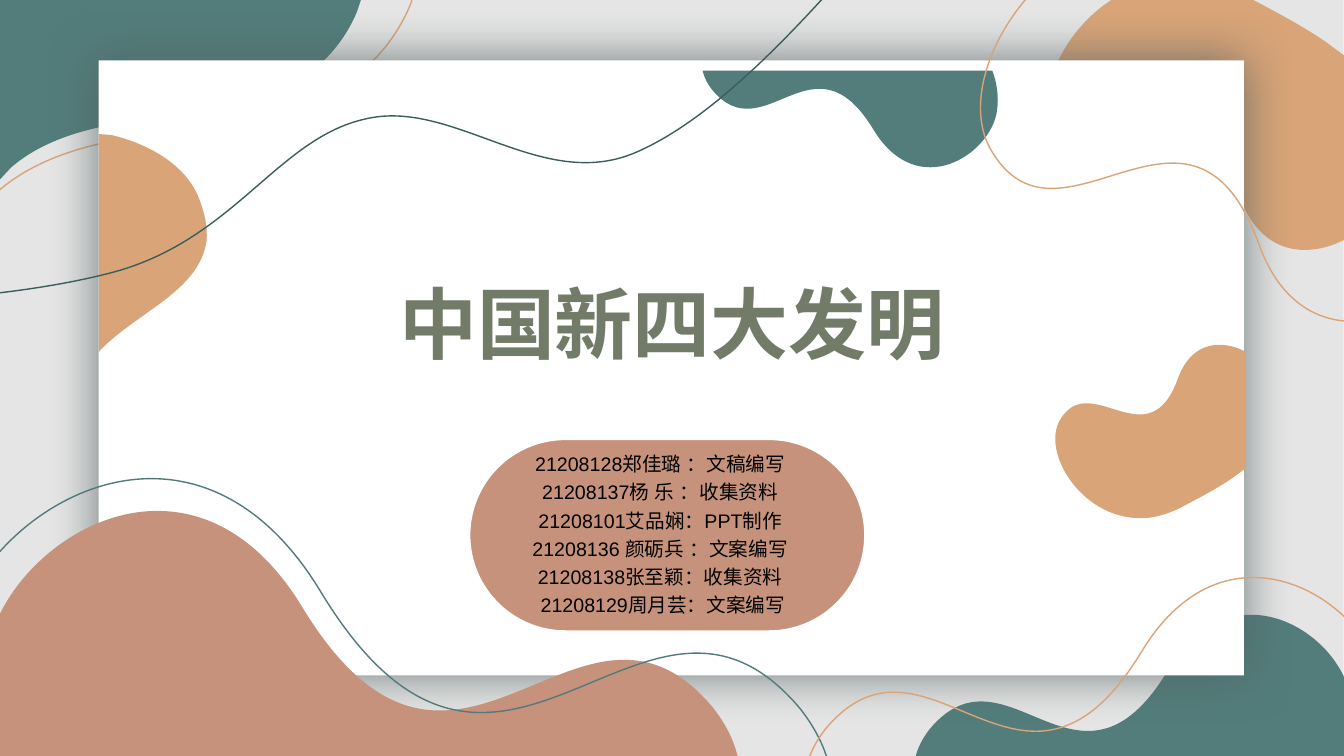
from lxml import etree
from pptx import Presentation
from pptx.dml.color import RGBColor
from pptx.enum.shapes import MSO_SHAPE as SHAPE
from pptx.enum.text import MSO_ANCHOR as ANCHOR, PP_ALIGN as ALIGN
from pptx.oxml import parse_xml
from pptx.oxml.ns import nsdecls, qn
from pptx.util import Inches, Pt

COLORS = {
    "backdrop": "808080", "paper": "FFFFFF", "shade": "566363",
    "teal": "527D7B", "teal_line": "52797B", "dark_teal": "3D5C5B",
    "sand": "D8A478", "clay": "C6927B", "title": "727B68", "ink": "000000",
}
FONT = "Arial"
PATH_UNITS = 100000

# Outlines in percent of their box: two numbers are a corner, six are a Bézier curve.
WAVE = [(1.9, 100), (0.3, 87.2, -0.4, 73.6, 0.3, 58.2),
        (2.3, 13.8, 27.1, -37.2, 42.2, 39.3),
        (62.6, 141.8, 79, 15.2, 96.7, 79.9),
        (98.2, 85.8, 99.4, 92.3, 100, 100)]
CORNER = [(0, 0), (100, 0), (98.9, 6.7), (92.5, 37.6, 76.5, 61.8, 47.2, 65.7),
          (24.9, 68.5, 11.5, 78.7, 3.1, 93.3), (0, 100)]
BLOB = [(44, 0), (13.6, 0.5, -7.3, 37.9, 2.3, 56.3),
        (18.3, 86.7, 48.9, 33, 64.6, 80.3),
        (71.2, 100.3, 85, 102.8, 97, 97.7), (100, 96.2), (100, 28.4),
        (93.7, 23.3), (83.8, 15.9, 73.1, 10.2, 66.3, 6.1),
        (58.3, 1.8, 50.8, -0.3, 44, 0)]
PEBBLE = [(99, 48.8), (92.6, 71.9, 34.3, 81.6, 0.9, 99.1), (0, 100), (0, 0),
          (12, 0.5), (50, 5.1, 80.6, 15.2, 91.7, 29),
          (98.1, 36.9, 100, 43.3, 99, 48.8)]
RIBBON = [(0, 99.8), (13.9, 99.5, 27.9, 99.1, 37.4, 91.8),
          (46.8, 84.7, 50.1, 61.3, 56.8, 56.8),
          (63.5, 51.9, 70.2, 73.7, 77.4, 64.3), (84.6, 54.9, 92.3, 27.5, 100, 0)]

TEAM = ["21208128郑佳璐 ：文稿编写", "21208137杨 乐 ：收集资料",
        "21208101艾品娴：PPT制作", "21208136 颜砺兵 ：文案编写",
        "21208138张至颖：收集资料", " 21208129周月芸：文案编写"]


def rgb(name):
    return RGBColor.from_string(COLORS[name])


def paint(shape, fill=None, line=None):
    shape.shadow.inherit = False
    if fill:
        shape.fill.solid()
        shape.fill.fore_color.rgb = rgb(fill)
    else:
        shape.fill.background()
    if line:
        shape.line.color.rgb = rgb(line)
        shape.line.width = Pt(1)
    else:
        shape.line.fill.background()


def draw_curves(path, outline, flip_x, flip_y, closed):
    """Replace the segments of a freeform's path with an outline's corners and curves."""
    for segment in list(path):
        path.remove(segment)
    path.set("w", str(PATH_UNITS))
    path.set("h", str(PATH_UNITS))
    for index, numbers in enumerate(outline):
        tag = "a:moveTo" if index == 0 else "a:lnTo" if len(numbers) == 2 else "a:cubicBezTo"
        segment = etree.SubElement(path, qn(tag))
        for x, y in zip(numbers[::2], numbers[1::2]):
            x, y = 100 - x if flip_x else x, 100 - y if flip_y else y
            etree.SubElement(segment, qn("a:pt"), x=str(round(x * PATH_UNITS / 100)),
                             y=str(round(y * PATH_UNITS / 100)))
    if closed:
        etree.SubElement(path, qn("a:close"))


def add_outline(shapes, outline, box, fill=None, line=None,
                flip_x=False, flip_y=False, closed=True):
    """Fit an outline into a box, mirrored if asked."""
    left, top, width, height = map(Inches, box)
    right, bottom = left + width, top + height
    builder = shapes.build_freeform(left, top)
    builder.add_line_segments([(right, top), (right, bottom), (left, bottom)])
    shape = builder.convert_to_shape()
    path = next(shape._element.iter(qn("a:path")))
    draw_curves(path, outline, flip_x, flip_y, closed)
    paint(shape, fill, line)


def add_box(shapes, kind, box, fill, line=None):
    shape = shapes.add_shape(kind, *map(Inches, box))
    paint(shape, fill, line)
    return shape


def add_text(shapes, box, lines, size, color, bold=None, anchor=ANCHOR.TOP):
    frame = shapes.add_textbox(*map(Inches, box)).text_frame
    frame.word_wrap = True
    frame.vertical_anchor = anchor
    for index, line in enumerate(lines):
        paragraph = frame.paragraphs[0] if index == 0 else frame.add_paragraph()
        paragraph.alignment = ALIGN.CENTER
        paragraph.line_spacing = 1.2
        run = paragraph.add_run()
        run.text = line
        run.font.name = FONT
        run.font.size = Pt(size)
        run.font.bold = bold
        run.font.color.rgb = rgb(color)
        etree.SubElement(run.font._element, qn("a:ea"), typeface=FONT)
    return frame


def add_backdrop(shapes):
    backdrop = add_box(shapes, SHAPE.RECTANGLE, (0, -0.01, 13.33, 7.52), "backdrop")
    color = backdrop._element.spPr.find(qn("a:solidFill"))[0]
    etree.SubElement(color, qn("a:alpha"), val="20000")


def add_paper(shapes):
    paper = add_box(shapes, SHAPE.RECTANGLE, (0.98, 0.6, 11.36, 6.1), "paper")
    effects = paper._element.spPr.find(qn("a:effectLst"))
    effects.append(parse_xml(
        f'<a:outerShdw {nsdecls("a")} blurRad="{Pt(35)}" dist="0" dir="0" '
        f'algn="ctr" rotWithShape="0"><a:srgbClr val="{COLORS["shade"]}">'
        '<a:alpha val="83000"/></a:srgbClr></a:outerShdw>'))


def add_team(shapes):
    team = shapes.add_group_shape().shapes
    pill = add_box(team, SHAPE.ROUNDED_RECTANGLE, (4.66, 4.36, 3.92, 1.9), "clay", "paper")
    pill.adjustments[0] = 0.5
    add_text(team, (2.38, 4.39, 8.34, 3.65), TEAM, 14, "ink")


def add_title(shapes):
    frame = add_text(shapes, (2.67, 2.32, 7.99, 1.9), ["中国新四大发明"], 96, "title",
                     bold=True, anchor=ANCHOR.BOTTOM)
    properties = frame.paragraphs[0].runs[0].font._element
    properties.set("baseline", "30000")
    properties.insert(0, parse_xml(
        f'<a:ln {nsdecls("a")} w="{Pt(0.75)}"><a:solidFill>'
        f'<a:srgbClr val="{COLORS["paper"]}"/></a:solidFill></a:ln>'))


def main():
    deck = Presentation()
    deck.slide_width, deck.slide_height = Inches(40 / 3), Inches(7.5)
    shapes = deck.slides.add_slide(deck.slide_layouts[6]).shapes

    add_backdrop(shapes)
    add_outline(shapes, WAVE, (9.08, 6.1, 4.33, 1.42), "teal", flip_x=True)
    add_outline(shapes, CORNER, (0, 0, 3.58, 1.78), "teal")
    add_outline(shapes, CORNER, (-0.15, -0.1, 4.27, 2.14), line="sand")
    add_outline(shapes, BLOB, (10.4, -0.21, 2.94, 2.69), "sand")
    add_paper(shapes)
    add_outline(shapes, WAVE, (6.97, 0.7, 2.93, 0.96), "teal", flip_x=True, flip_y=True)
    add_outline(shapes, WAVE, (-0.15, 5.07, 7.47, 2.44), "clay")
    add_outline(shapes, WAVE, (-0.5, 4.75, 8.73, 2.86), line="teal_line")
    add_outline(shapes, BLOB, (10.47, 3.42, 1.88, 1.72), "sand", flip_y=True)
    add_outline(shapes, WAVE, (8, 5.73, 5.75, 1.88), line="sand", flip_x=True)
    add_outline(shapes, PEBBLE, (0.98, 1.33, 1.08, 2.17), "sand")
    add_team(shapes)
    add_title(shapes)
    add_outline(shapes, BLOB, (9.73, -0.72, 4.27, 3.91), line="sand")
    add_outline(shapes, RIBBON, (-3.81, -1.3, 13.08, 4.37), line="dark_teal", closed=False)

    deck.save("out.pptx")


if __name__ == "__main__":
    main()
